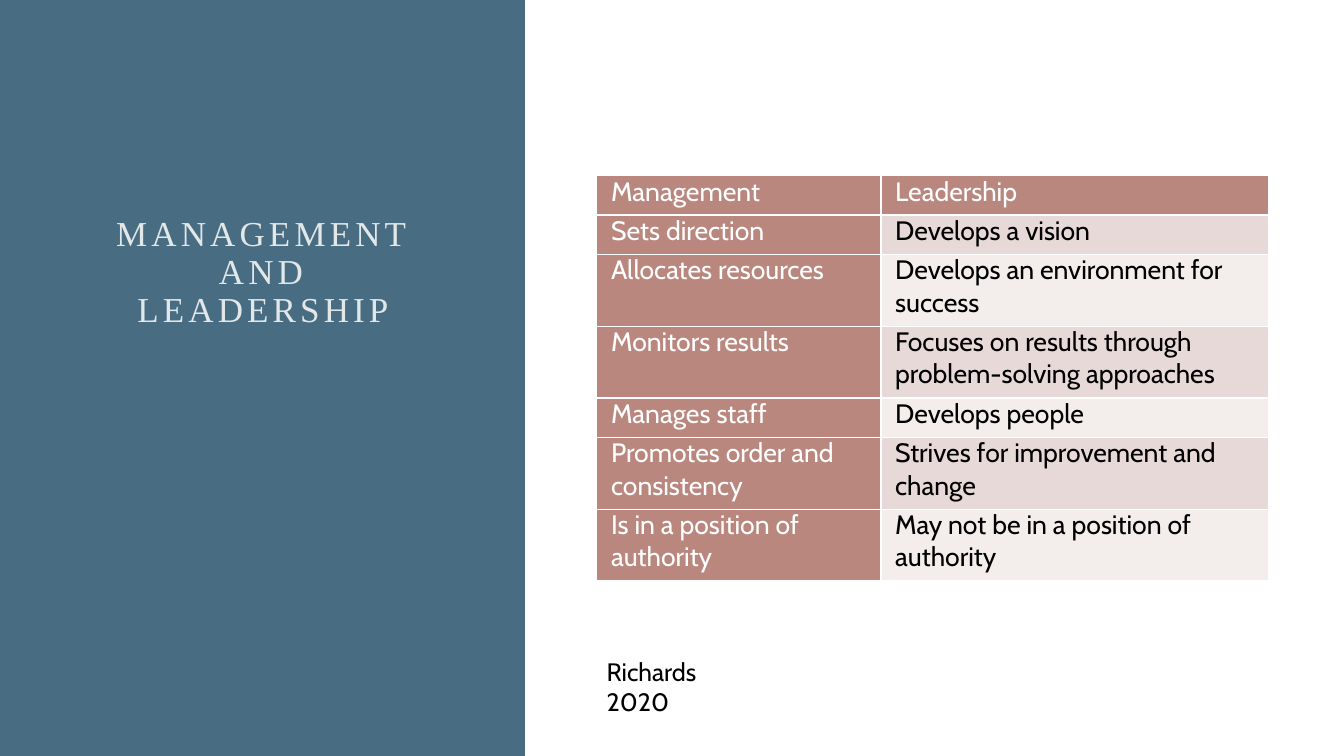
import pptx
import pptx.util
import pptx.dml.color
import pptx.enum.shapes
import pptx.enum.text
import lxml.etree
from pptx.util import Cm

COLORS = {
    "panel": "486D83",
    "title": "E2E7E8",
    "rose": "BA877F",
    "dark_band": "E7D9D8",
    "light_band": "F3EDEC",
    "white": "FFFFFF",
    "black": "000000",
}
ROWS = [
    ("Management", "Leadership"),
    ("Sets direction", "Develops a vision"),
    ("Allocates resources", "Develops an environment for success"),
    ("Monitors results", "Focuses on results through problem-solving approaches"),
    ("Manages staff", "Develops people"),
    ("Promotes order and consistency", "Strives for improvement and change"),
    ("Is in a position of authority", "May not be in a position of authority"),
]
COLUMN_WIDTHS = [7.16, 9.78]
ROW_HEIGHTS = [0.99, 0.99, 1.81, 1.81, 0.99, 1.81, 1.81]
TABLE_LEFT = 15.04


def rgb(name):
    return pptx.dml.color.RGBColor.from_string(COLORS[name])


def add_span(para, text, font, size, color):
    span = para.add_run()
    span.text = text
    span.font.name = font
    span.font.size = pptx.util.Pt(size)
    span.font.color.rgb = rgb(color)
    return span


deck = pptx.Presentation()
deck.slide_width = Cm(33.87)
deck.slide_height = Cm(19.05)
page = deck.slides.add_slide(deck.slide_layouts[5])

panel = page.shapes.add_shape(
    pptx.enum.shapes.MSO_SHAPE.RECTANGLE, Cm(0), Cm(0), Cm(13.23), deck.slide_height
)
panel.shadow.inherit = False
panel.fill.solid()
panel.fill.fore_color.rgb = rgb("panel")
panel.line.fill.background()

title = page.shapes.title
panel.element.addnext(title.element)
title.left, title.top, title.width, title.height = Cm(2.39), Cm(1.9), Cm(8.48), Cm(8.46)
frame = title.text_frame
frame.word_wrap = True
frame.auto_size = pptx.enum.text.MSO_AUTO_SIZE.NONE
frame.vertical_anchor = pptx.enum.text.MSO_ANCHOR.BOTTOM
frame.margin_bottom = Cm(2.05)
para = frame.paragraphs[0]
para.alignment = pptx.enum.text.PP_ALIGN.CENTER
para.line_spacing = 0.9
span = add_span(para, "MANAGEMENT AND LEADERSHIP", "Times New Roman", 25, "title")
span._r.get_or_add_rPr().set("spc", "300")

table = page.shapes.add_table(
    len(ROWS), 2, Cm(TABLE_LEFT), Cm(4.43), Cm(sum(COLUMN_WIDTHS)), Cm(sum(ROW_HEIGHTS))
).table
for column, width in zip(table.columns, COLUMN_WIDTHS):
    column.width = Cm(width)
for row, height in zip(table.rows, ROW_HEIGHTS):
    row.height = Cm(height)

for row_index, texts in enumerate(ROWS):
    for column_index, text in enumerate(texts):
        cell = table.cell(row_index, column_index)
        cell.margin_left = cell.margin_right = Cm(0.36)
        cell.margin_top = cell.margin_bottom = Cm(0)
        heading = row_index == 0 or column_index == 0
        band = "dark_band" if row_index % 2 else "light_band"
        span = add_span(
            cell.text_frame.paragraphs[0], text, "Cabin", 19, "white" if heading else "black"
        )
        span.font.bold = False
        properties = cell._tc.get_or_add_tcPr()
        for side in ("lnL", "lnR", "lnT", "lnB"):
            border = lxml.etree.SubElement(properties, pptx.oxml.ns.qn(f"a:{side}"), w="12700")
            fill = lxml.etree.SubElement(border, pptx.oxml.ns.qn("a:solidFill"))
            lxml.etree.SubElement(fill, pptx.oxml.ns.qn("a:srgbClr"), val=COLORS["white"])
        cell.fill.solid()
        cell.fill.fore_color.rgb = rgb("rose" if heading else band)

box = page.shapes.add_textbox(Cm(TABLE_LEFT), Cm(16.41), Cm(4.19), Cm(1.02))
box.text_frame.word_wrap = True
add_span(box.text_frame.paragraphs[0], "Richards 2020", "Cabin", 18, "black")

deck.save("out.pptx")
